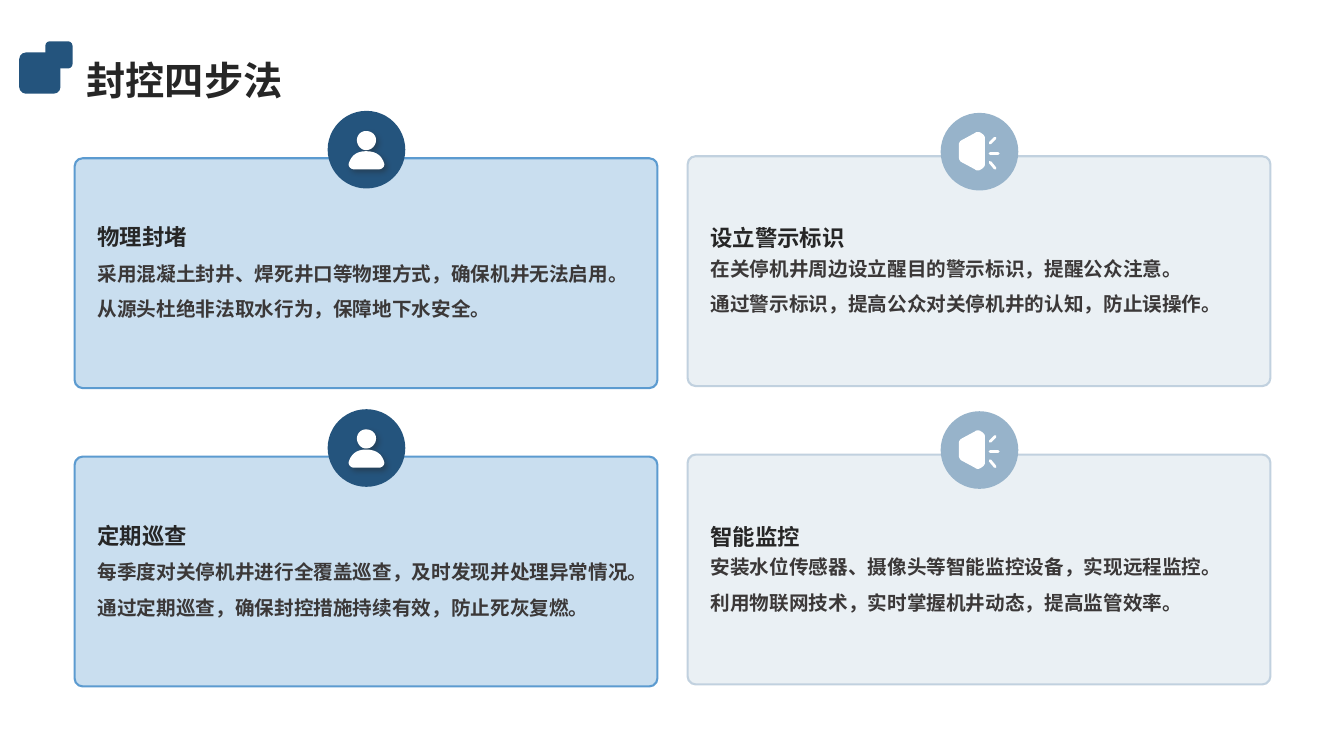
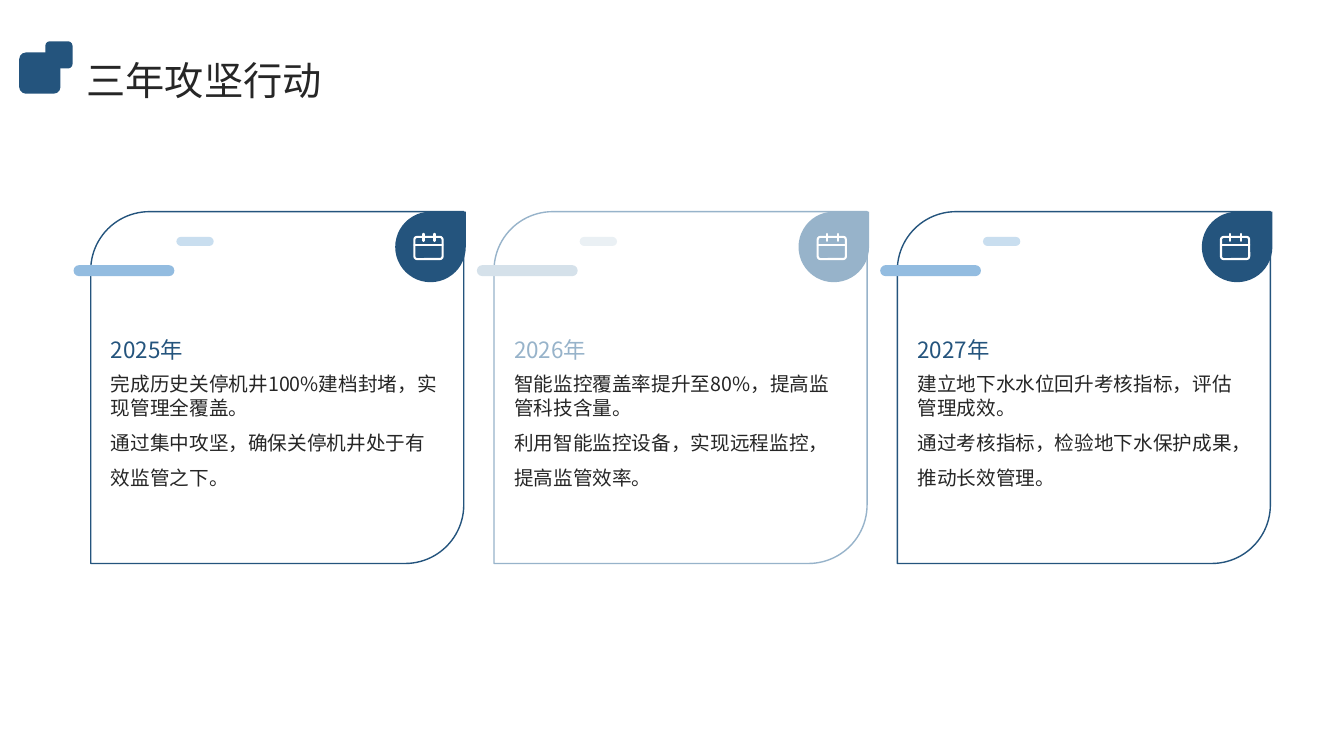
"""Build two slides on sealing wells: four steps and a three-year plan."""
from dataclasses import dataclass

from lxml import etree
from pptx import Presentation
from pptx import util as u
from pptx.dml.color import RGBColor
from pptx.enum import shapes, text
from pptx.oxml.ns import qn

Kind = shapes.MSO_SHAPE


@dataclass(frozen=True)
class Theme:
    """Colours, font and type sizes."""
    font: str = "Noto Sans CJK SC"
    white: str = "FFFFFF"
    ink: str = "262626"
    gray: str = "3B3838"
    navy: str = "24547D"
    steel: str = "97B3CA"
    sky: str = "C9DEEF"
    mist: str = "EAF0F4"
    blue: str = "5C9BD0"
    haze: str = "C1D1DF"
    bar: str = "93BCE0"
    pale: str = "D5E1EA"
    title: int = 28
    head: int = 16
    body: int = 14


@dataclass(frozen=True)
class Look:
    """Colours and places of one column of step cards."""
    left: float
    top: float
    badge: float
    head: float
    body: float
    fill: str
    edge: str
    tone: str
    icon: object


T = Theme()
PITCH = 2.96
STEPS = [
    ("物理封堵", ["采用混凝土封井、焊死井口等物理方式，确保机井无法启用。",
              "从源头杜绝非法取水行为，保障地下水安全。"]),
    ("设立警示标识", ["在关停机井周边设立醒目的警示标识，提醒公众注意。",
                "通过警示标识，提高公众对关停机井的认知，防止误操作。"]),
    ("定期巡查", ["每季度对关停机井进行全覆盖巡查，及时发现并处理异常情况。",
              "通过定期巡查，确保封控措施持续有效，防止死灰复燃。"]),
    ("智能监控", ["安装水位传感器、摄像头等智能监控设备，实现远程监控。",
              "利用物联网技术，实时掌握机井动态，提高监管效率。"]),
]
YEARS = [
    ("2025年", ["完成历史关停机井100%建档封堵，实现管理全覆盖。",
               "通过集中攻坚，确保关停机井处于有效监管之下。"]),
    ("2026年", ["智能监控覆盖率提升至80%，提高监管科技含量。",
               "利用智能监控设备，实现远程监控，提高监管效率。"]),
    ("2027年", ["建立地下水水位回升考核指标，评估管理成效。",
               "通过考核指标，检验地下水保护成果，推动长效管理。"]),
]
HEAD = [(0.17, 0), (0.23, 0, 0.27, 0.04, 0.27, 0.09),
        (0.27, 0.14, 0.23, 0.19, 0.17, 0.19),
        (0.12, 0.19, 0.08, 0.14, 0.08, 0.09),
        (0.08, 0.04, 0.12, 0, 0.17, 0)]
BUST = [(0.17, 0.2), (0.29, 0.2, 0.33, 0.26, 0.35, 0.32),
        (0.36, 0.35, 0.33, 0.38, 0.3, 0.38), (0.05, 0.38),
        (0.02, 0.38, -0.01, 0.35, 0, 0.32),
        (0.02, 0.26, 0.06, 0.2, 0.17, 0.2)]
HORN = [(0.19, 0), (0.2, 0, 0.21, 0, 0.22, 0.01),
        (0.24, 0.02, 0.26, 0.04, 0.26, 0.06), (0.26, 0.32),
        (0.26, 0.34, 0.24, 0.36, 0.22, 0.37),
        (0.21, 0.38, 0.18, 0.39, 0.16, 0.37), (0.03, 0.3),
        (0.01, 0.29, 0, 0.27, 0, 0.24), (0, 0.13),
        (0, 0.11, 0.01, 0.09, 0.03, 0.08), (0.16, 0.01),
        (0.17, 0, 0.18, 0, 0.19, 0)]


def rgb(tone):
    """Turn a hex string into a colour."""
    return RGBColor.from_string(tone)


def paint(item, fill, edge=None, width=1):
    """Set fill and line and drop the shadow."""
    item.shadow.inherit = False
    if fill:
        item.fill.solid()
        item.fill.fore_color.rgb = rgb(fill)
    else:
        item.fill.background()
    if edge:
        item.line.color.rgb = rgb(edge)
        item.line.width = u.Pt(width)
    else:
        item.line.fill.background()
    return item


def block(page, kind, box, fill, edge=None, width=1, adj=None):
    """Add a preset shape."""
    item = page.shapes.add_shape(kind, *map(u.Inches, box))
    if adj is not None:
        item.adjustments[0] = adj
    return paint(item, fill, edge, width)


def stroke(page, ends, width):
    """Add a white line with round ends."""
    item = page.shapes.add_connector(
        shapes.MSO_CONNECTOR.STRAIGHT, *map(u.Inches, ends))
    item.line.color.rgb = rgb(T.white)
    item.line.width = u.Pt(width)
    item.line._get_or_add_ln().set("cap", "rnd")
    etree.SubElement(item._element.spPr, qn("a:effectLst"))


def curve(nodes, steps=8):
    """Turn line and Bezier nodes into points."""
    points = [nodes[0]]
    for node in nodes[1:]:
        if len(node) == 2:
            points.append(node)
            continue
        a, b, c, d = points[-1], node[:2], node[2:4], node[4:]
        for i in range(1, steps + 1):
            t = i / steps
            s = 1 - t
            points.append(tuple(
                s**3 * a[k] + 3 * s * s * t * b[k]
                + 3 * s * t * t * c[k] + t**3 * d[k] for k in (0, 1)))
    return points


def trace(page, x, y, paths):
    """Draw closed curved outlines as one white shape."""
    pen = None
    for nodes in paths:
        points = [(u.Inches(x + a), u.Inches(y + b)) for a, b in curve(nodes)]
        if pen is None:
            pen = page.shapes.build_freeform(*points[0])
        else:
            pen.move_to(*points[0])
        pen.add_line_segments(points[1:], close=True)
    return paint(pen.convert_to_shape(), T.white)


def shade(item):
    """Give a shape a soft dark shadow."""
    effect = item._element.spPr.find(qn("a:effectLst"))
    drop = etree.SubElement(
        effect, qn("a:outerShdw"), blurRad=str(u.Pt(4)), dist=str(u.Pt(3)),
        dir="2700000", algn="tl", rotWithShape="0")
    tint = etree.SubElement(drop, qn("a:srgbClr"), val=T.ink)
    etree.SubElement(tint, qn("a:alpha"), val="40000")


def person(page, x, y):
    """Draw the person icon in a badge."""
    shade(trace(page, x + 0.21, y + 0.2, [BUST, HEAD]))


def horn(page, x, y):
    """Draw the loudspeaker icon in a badge."""
    x, y = x + 0.18, y + 0.19
    trace(page, x, y, [HORN])
    for a, b, c, d in [(0.31, 0.11, 0.36, 0.06), (0.31, 0.21, 0.39, 0.21),
                       (0.31, 0.3, 0.36, 0.36)]:
        stroke(page, (x + a, y + b, x + c, y + d), 2)


def dates(page, x, y):
    """Draw the calendar icon."""
    block(page, Kind.ROUNDED_RECTANGLE, (x + 0.01, y + 0.04, 0.28, 0.22),
          None, T.white, 1.5, 0.12)
    stroke(page, (x + 0.01, y + 0.12, x + 0.29, y + 0.12), 1.5)
    for pin in (0.1, 0.21):
        stroke(page, (x + pin, y + 0.01, x + pin, y + 0.08), 1.5)


def write(page, box, lines, size, tone, gaps, bold=False, inset=True,
          anchor=text.MSO_ANCHOR.TOP):
    """Add a text box with one paragraph for each line."""
    frame = page.shapes.add_textbox(*map(u.Inches, box)).text_frame
    frame.word_wrap = True
    frame.vertical_anchor = anchor
    if not inset:
        frame.margin_left = frame.margin_right = 0
        frame.margin_top = frame.margin_bottom = 0
    for i, (line, gap) in enumerate(zip(lines, gaps)):
        para = frame.add_paragraph() if i else frame.paragraphs[0]
        para.line_spacing = gap
        run = para.add_run()
        run.text = line
        font = run.font
        font.size, font.bold, font.name = u.Pt(size), bold, T.font
        font.color.rgb = rgb(tone)
        etree.SubElement(run._r.get_or_add_rPr(), qn("a:ea"), typeface=T.font)


def start(deck, title, bold=False):
    """Add a slide with its title and corner mark."""
    page = deck.slides.add_slide(deck.slide_layouts[6])
    page.background.fill.solid()
    page.background.fill.fore_color.rgb = rgb(T.white)
    write(page, (0.86, 0.51, 11.67, 0.51), [title], T.title, T.ink, [1.1],
          bold, False, text.MSO_ANCHOR.MIDDLE)
    mark = page.shapes.add_group_shape()
    for x, y, side in [(0.19, 0.52, 0.41), (0.45, 0.41, 0.27)]:
        paint(mark.shapes.add_shape(
            Kind.ROUNDED_RECTANGLE, *map(u.Inches, (x, y, side, side))), T.navy)
    return page


def step(page, look, down, head, lines):
    """Add one step card with its badge."""
    x, y = look.left + 2.51, look.badge + down
    block(page, Kind.ROUNDED_RECTANGLE, (look.left, look.top + down, 5.78, 2.28),
          look.fill, look.edge, 1.5, 0.035)
    block(page, Kind.FLOWCHART_CONNECTOR, (x, y, 0.77, 0.77), look.tone)
    look.icon(page, x, y)
    side = look.left + 0.13
    write(page, (side, look.head + down, 5.53, 0.4), [head],
          T.head, T.ink, [1.1], True)
    write(page, (side, look.body + down, 5.53, 1.12), lines,
          T.body, T.gray, [1.0, 1.5], True)


def year(page, x, head, lines, tone, bar, chip):
    """Add one year card with its badge and bars."""
    top = 2.1
    block(page, Kind.ROUND_2_DIAG_RECTANGLE, (x, top, 3.7, 3.49), T.white, tone)
    block(page, Kind.TEAR, (x + 3.02, top, 0.7, 0.7), tone)
    block(page, Kind.ROUNDED_RECTANGLE, (x - 0.17, 2.63, 1, 0.11), bar, adj=0.5)
    block(page, Kind.ROUNDED_RECTANGLE, (x + 0.85, 2.35, 0.37, 0.09), chip,
          adj=0.5)
    dates(page, x + 3.2, 2.31)
    write(page, (x + 0.2, 2.87, 3.3, 0.73), [head], T.head, tone, [1.3],
          inset=False, anchor=text.MSO_ANCHOR.BOTTOM)
    write(page, (x + 0.2, 3.69, 3.3, 1.57), lines, T.body, T.ink, [1.0, 1.5],
          inset=False)


def main():
    """Build and save the deck."""
    deck = Presentation()
    deck.slide_width, deck.slide_height = u.Inches(13.33), u.Inches(7.5)
    page = start(deck, "封控四步法", True)
    looks = [
        Look(0.74, 1.57, 1.1, 2.14, 2.55, T.sky, T.blue, T.navy, person),
        Look(6.82, 1.55, 1.12, 2.15, 2.5, T.mist, T.haze, T.steel, horn)]
    for i, (head, lines) in enumerate(STEPS):
        step(page, looks[i % 2], i // 2 * PITCH, head, lines)
    page = start(deck, "三年攻坚行动")
    tones = [(T.navy, T.bar, T.sky), (T.steel, T.pale, T.mist)]
    for i, (head, lines) in enumerate(YEARS):
        year(page, 0.9 + 4 * i, head, lines, *tones[i % 2])
    deck.save("out.pptx")


if __name__ == "__main__":
    main()
